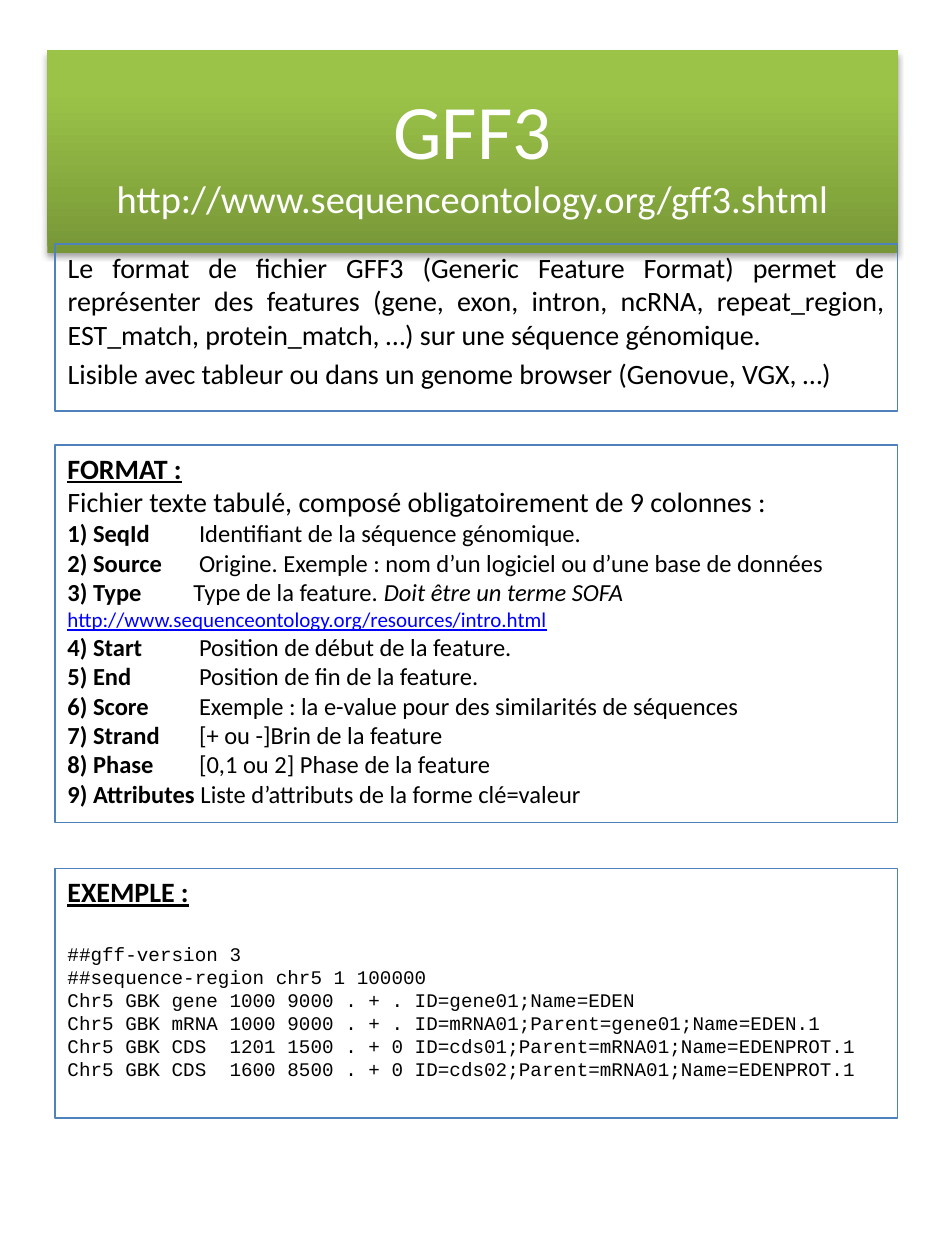
from lxml.etree import SubElement
from pptx import Presentation
from pptx.dml.color import RGBColor
from pptx.enum.shapes import MSO_SHAPE
from pptx.enum.text import MSO_ANCHOR, MSO_AUTO_SIZE, PP_ALIGN
from pptx.oxml.ns import qn
from pptx.util import Inches, Pt

WIDTH, HEIGHT = Inches(7.5), Inches(10)
COLUMNS, ROWS = 120, 160

BLACK = RGBColor(0x00, 0x00, 0x00)
WHITE = RGBColor(0xFF, 0xFF, 0xFF)
LINK_BLUE = RGBColor(0x00, 0x00, 0xFF)
BORDER_BLUE = RGBColor(0x4F, 0x81, 0xBD)
DARK_GREEN = RGBColor(0x77, 0x97, 0x37)
LIGHT_GREEN = RGBColor(0x9B, 0xC3, 0x48)

INTRODUCTION = [
    "Le format de fichier GFF3 (Generic Feature Format) permet de représenter "
    "des features (gene, exon, intron, ncRNA, repeat_region, EST_match, "
    "protein_match, …) sur une séquence génomique.",
    "Lisible avec tableur ou dans un genome browser (Genovue, VGX, …)",
]
FIELDS = [
    ("SeqId", "\t ", "Identifiant de la séquence génomique."),
    ("Source", "\t ", "Origine. Exemple : nom d’un logiciel ou d’une base de données"),
    ("Type", "\t", "Type de la feature. "),
    ("Start", "\t ", "Position de début de la feature."),
    ("End", "\t ", "Position de fin de la feature."),
    ("Score", "\t ", "Exemple : la e-value pour des similarités de séquences"),
    ("Strand", "\t ", "[+ ou -]Brin de la feature"),
    ("Phase", "\t ", "[0,1 ou 2] Phase de la feature"),
    ("Attributes", " ", "Liste d’attributs de la forme clé=valeur"),
]
EXAMPLE = [
    "##gff-version 3",
    "##sequence-region chr5 1 100000",
    "Chr5 GBK gene 1000 9000 . + . ID=gene01;Name=EDEN",
    "Chr5 GBK mRNA 1000 9000 . + . ID=mRNA01;Parent=gene01;Name=EDEN.1",
    "Chr5 GBK CDS  1201 1500 . + 0 ID=cds01;Parent=mRNA01;Name=EDENPROT.1",
    "Chr5 GBK CDS  1600 8500 . + 0 ID=cds02;Parent=mRNA01;Name=EDENPROT.1",
]


def place(shape, box):
    """Move a shape to a box of grid columns and rows."""
    left, top, width, height = box
    shape.left, shape.width = (round(WIDTH * n / COLUMNS) for n in (left, width))
    shape.top, shape.height = (round(HEIGHT * n / ROWS) for n in (top, height))


def write(paragraph, text, size=16, color=BLACK, name="Calibri",
          bold=False, italic=False, underline=False):
    """Add a formatted run to a paragraph."""
    run = paragraph.add_run()
    run.text = text
    font = run.font
    font.size, font.name, font.color.rgb = Pt(size), name, color
    font.bold, font.italic, font.underline = bold, italic, underline


def next_paragraph(frame, align=PP_ALIGN.LEFT):
    """Return the empty first paragraph, or a new one, aligned."""
    first = frame.paragraphs[0]
    paragraph = frame.add_paragraph() if first.runs else first
    paragraph.alignment = align
    return paragraph


def outline(shape, box):
    """Place a bordered text panel and return its text frame."""
    place(shape, box)
    shape.fill.background()
    shape.line.color.rgb = BORDER_BLUE
    shape.line.width = Pt(0.75)
    shape.shadow.inherit = False
    frame = shape.text_frame
    frame.word_wrap = True
    frame.auto_size = MSO_AUTO_SIZE.NONE
    frame.vertical_anchor = MSO_ANCHOR.TOP
    return frame


def add_panel(slide, box, heading):
    """Add a bordered panel with an underlined heading."""
    shape = slide.shapes.add_shape(MSO_SHAPE.RECTANGLE, 0, 0, 0, 0)
    frame = outline(shape, box)
    write(next_paragraph(frame), heading, bold=True, underline=True)
    return frame


def build_title(slide, box):
    """Fill the green title banner."""
    title = slide.shapes.title
    place(title, box)
    title.fill.gradient()
    title.fill.gradient_angle = 90
    stops = title.fill.gradient_stops
    for stop, color, position in zip(stops, (DARK_GREEN, LIGHT_GREEN), (0, 0.8)):
        stop.color.rgb, stop.position = color, position
    title.line.fill.background()
    title.shadow.inherit = False
    effects = title.element.spPr.find(qn("a:effectLst"))
    shadow = SubElement(effects, qn("a:outerShdw"), blurRad=str(Pt(3.1)),
                        dist=str(Pt(1.8)), dir="5400000", rotWithShape="0")
    color = SubElement(shadow, qn("a:srgbClr"), val=str(BLACK))
    SubElement(color, qn("a:alpha"), val="35000")
    frame = title.text_frame
    frame.auto_size = MSO_AUTO_SIZE.NONE
    frame.vertical_anchor = MSO_ANCHOR.MIDDLE
    paragraph = next_paragraph(frame, PP_ALIGN.CENTER)
    write(paragraph, "GFF3", size=44, color=WHITE)
    paragraph.add_line_break()
    write(paragraph, "http://www.sequenceontology.org/gff3.shtml", size=22, color=WHITE)


def build_introduction(slide, box):
    """Fill the body placeholder with justified, unbulleted text."""
    frame = outline(slide.placeholders[1], box)
    for text in INTRODUCTION:
        paragraph = next_paragraph(frame, PP_ALIGN.JUSTIFY)
        properties = paragraph._p.get_or_add_pPr()
        properties.set("marL", "0")
        properties.set("indent", "0")
        SubElement(properties, qn("a:buNone"))
        write(paragraph, text)


def build_format(slide, box):
    """Add the panel that describes the nine columns."""
    frame = add_panel(slide, box, "FORMAT :")
    write(next_paragraph(frame),
          "Fichier texte tabulé, composé obligatoirement de 9 colonnes :")
    for number, (field, gap, meaning) in enumerate(FIELDS, 1):
        paragraph = next_paragraph(frame)
        write(paragraph, f"{number}) {field}{gap}", size=14, bold=True)
        write(paragraph, meaning, size=14)
        if field == "Type":
            write(paragraph, "Doit être un terme SOFA", size=14, italic=True)
            paragraph.add_line_break()
            write(paragraph, "http://www.sequenceontology.org/resources/intro.html",
                  size=12, color=LINK_BLUE, underline=True)


def build_example(slide, box):
    """Add the panel with a sample file."""
    frame = add_panel(slide, box, "EXEMPLE :")
    frame.paragraphs[0].space_after = Pt(19.5)
    for line in EXAMPLE:
        write(next_paragraph(frame), line, size=11, name="Courier New")


def main():
    """Build and save the one-slide sheet."""
    presentation = Presentation()
    presentation.slide_width, presentation.slide_height = WIDTH, HEIGHT
    slide = presentation.slides.add_slide(presentation.slide_layouts[1])
    build_title(slide, (6, 6.4, 108, 25.75))
    build_introduction(slide, (7, 31, 107, 21.2))
    build_format(slide, (7, 56.5, 107, 48))
    build_example(slide, (7, 110.25, 107, 31.75))
    presentation.save("out.pptx")


if __name__ == "__main__":
    main()
